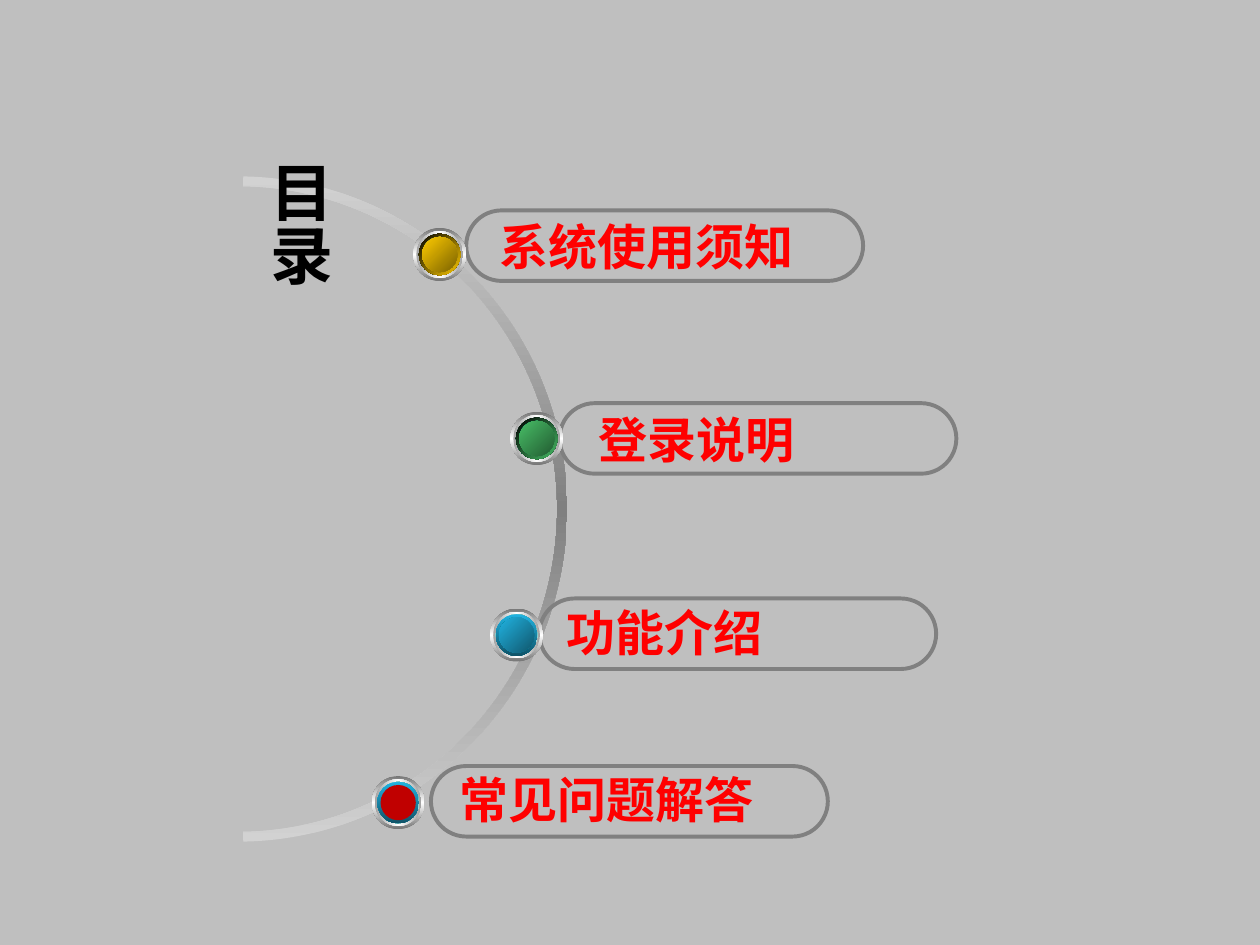
import lxml.etree
import pptx
import pptx.dml.color
import pptx.enum.shapes
import pptx.enum.text
import pptx.oxml
import pptx.oxml.ns
import pptx.util

Inches = pptx.util.Inches
Pt = pptx.util.Pt
SHAPE = pptx.enum.shapes.MSO_SHAPE
qn = pptx.oxml.ns.qn

DRAWING = 'xmlns:a="http://schemas.openxmlformats.org/drawingml/2006/main"'
GRAY = "808080"
PILL_WIDTH, PILL_HEIGHT = 3.15, 0.56
LABEL_HEIGHT = 0.6
KNOB_SIZE = 0.42

YELLOW_RIM = (["000000", "FFCC00"], 45)
GREEN_RIM = (["000000", "48BE67"], 45)
BLUE_RIM = (["21B3E1", "0F5368"], 90)

ENTRIES = [
    ("系统使用须知", (3.70, 1.67), (3.28, 1.81), (3.87, 1.67), 2.53,
     YELLOW_RIM, (["FFCC00", "7C6300"], 45)),
    ("登录说明", (4.44, 3.20), (4.05, 3.27), (4.65, 3.20), 1.76,
     GREEN_RIM, (["48BE67", "235C32"], 45)),
    ("功能介绍", (4.28, 4.75), (3.89, 4.83), (4.40, 4.73), 1.76,
     BLUE_RIM, (["21B3E1", "10576D"], 45)),
    ("常见问题解答", (3.42, 6.08), (2.95, 6.16), (3.55, 6.06), 2.53,
     BLUE_RIM, (["C00000"], 0)),
]


def color(value):
    return pptx.dml.color.RGBColor.from_string(value)


def fill_shape(shape, colors, angle):
    shape.fill.solid()
    shape.fill.fore_color.rgb = color(colors[0])
    if len(colors) == 1:
        return
    step = 100000 // (len(colors) - 1)
    stops = "".join(
        f'<a:gs pos="{index * step}"><a:srgbClr val="{value}"/></a:gs>'
        for index, value in enumerate(colors)
    )
    gradient = pptx.oxml.parse_xml(
        f'<a:gradFill {DRAWING} rotWithShape="1"><a:gsLst>{stops}</a:gsLst>'
        f'<a:lin ang="{angle * 60000}" scaled="0"/></a:gradFill>'
    )
    properties = shape._element.spPr
    properties.replace(properties.find(qn("a:solidFill")), gradient)


def add_plain_shape(shapes, kind, left, top, width, height):
    shape = shapes.add_shape(kind, Inches(left), Inches(top), Inches(width), Inches(height))
    shape.shadow.inherit = False
    shape.line.fill.background()
    return shape


def format_run(run, size, font_name, font_color):
    run.font.size = Pt(size)
    run.font.bold = True
    run.font.name = font_name
    run.font.color.rgb = color(font_color)
    east_asian = lxml.etree.SubElement(run._r.get_or_add_rPr(), qn("a:ea"))
    east_asian.set("typeface", "Noto Sans CJK SC")


def add_arc(slide, left, top, width, height):
    arc = add_plain_shape(slide.shapes, SHAPE.BLOCK_ARC, left, top, width, height)
    arc.rotation = 90
    arc.adjustments[0] = 108.53
    arc.adjustments[1] = 215.47
    arc.adjustments[2] = 0.015
    fill_shape(arc, ["D2D2D2", GRAY, "D2D2D2"], 0)


def add_title(slide, left, top, width, height):
    box = slide.shapes.add_textbox(Inches(left), Inches(top), Inches(width), Inches(height))
    frame = box.text_frame
    frame.word_wrap = True
    frame.margin_right = Inches(0.6)
    frame.vertical_anchor = pptx.enum.text.MSO_ANCHOR.MIDDLE
    frame._txBody.bodyPr.set("vert", "eaVert")
    frame.text = "目录"
    run = frame.paragraphs[0].runs[0]
    format_run(run, 36, "Arial", "000000")
    shadow = pptx.oxml.parse_xml(
        f'<a:effectLst {DRAWING}><a:outerShdw blurRad="0" dist="38100" dir="2700000">'
        f'<a:srgbClr val="{GRAY}"/></a:outerShdw></a:effectLst>'
    )
    run._r.rPr.find(qn("a:solidFill")).addnext(shadow)


def add_pill(slide, left, top):
    pill = add_plain_shape(
        slide.shapes, SHAPE.ROUNDED_RECTANGLE, left, top, PILL_WIDTH, PILL_HEIGHT
    )
    pill.adjustments[0] = 0.5
    pill.fill.background()
    pill.line.color.rgb = color(GRAY)
    pill.line.width = Pt(2.25)


def add_knob(slide, left, top, rim, face):
    layers = [
        (0.42, ["767676", "FFFFFF", "767676"], 90),
        (0.37, ["A2A2A2", "FFFFFF", "A2A2A2"], 0),
        (0.33, ["FFFFFF", "009999", "FFFFFF"], 45),
        (0.33, *rim),
    ]
    if len(face[0]) > 1:
        layers.append((0.28, ["007575", "009999", "007575"], 315))
    layers.append((0.28, *face))
    group = slide.shapes.add_group_shape()
    for size, colors, angle in layers:
        inset = (KNOB_SIZE - size) / 2
        disc = add_plain_shape(
            group.shapes, SHAPE.OVAL, left + inset, top + inset, size, size
        )
        fill_shape(disc, colors, angle)


def add_label(slide, text, left, top, width):
    box = slide.shapes.add_textbox(
        Inches(left), Inches(top), Inches(width), Inches(LABEL_HEIGHT)
    )
    frame = box.text_frame
    frame.word_wrap = False
    frame.auto_size = pptx.enum.text.MSO_AUTO_SIZE.SHAPE_TO_FIT_TEXT
    frame.text = text
    format_run(frame.paragraphs[0].runs[0], 28, "Noto Sans CJK SC", "FF0000")


def add_entry(slide, text, pill_at, knob_at, label_at, label_width, rim, face):
    add_pill(slide, *pill_at)
    add_knob(slide, *knob_at, rim, face)
    add_label(slide, text, *label_at, label_width)


def main():
    presentation = pptx.Presentation()
    presentation.slide_width = Inches(10)
    presentation.slide_height = Inches(7.5)
    slide = presentation.slides.add_slide(presentation.slide_layouts[6])
    slide.background.fill.solid()
    slide.background.fill.fore_color.rgb = color("BFBFBF")
    add_arc(slide, -0.75, 1.43, 5.28, 5.22)
    add_title(slide, 1.89, 1.18, 1.53, 4.71)
    for entry in ENTRIES:
        add_entry(slide, *entry)
    presentation.save("out.pptx")


if __name__ == "__main__":
    main()
